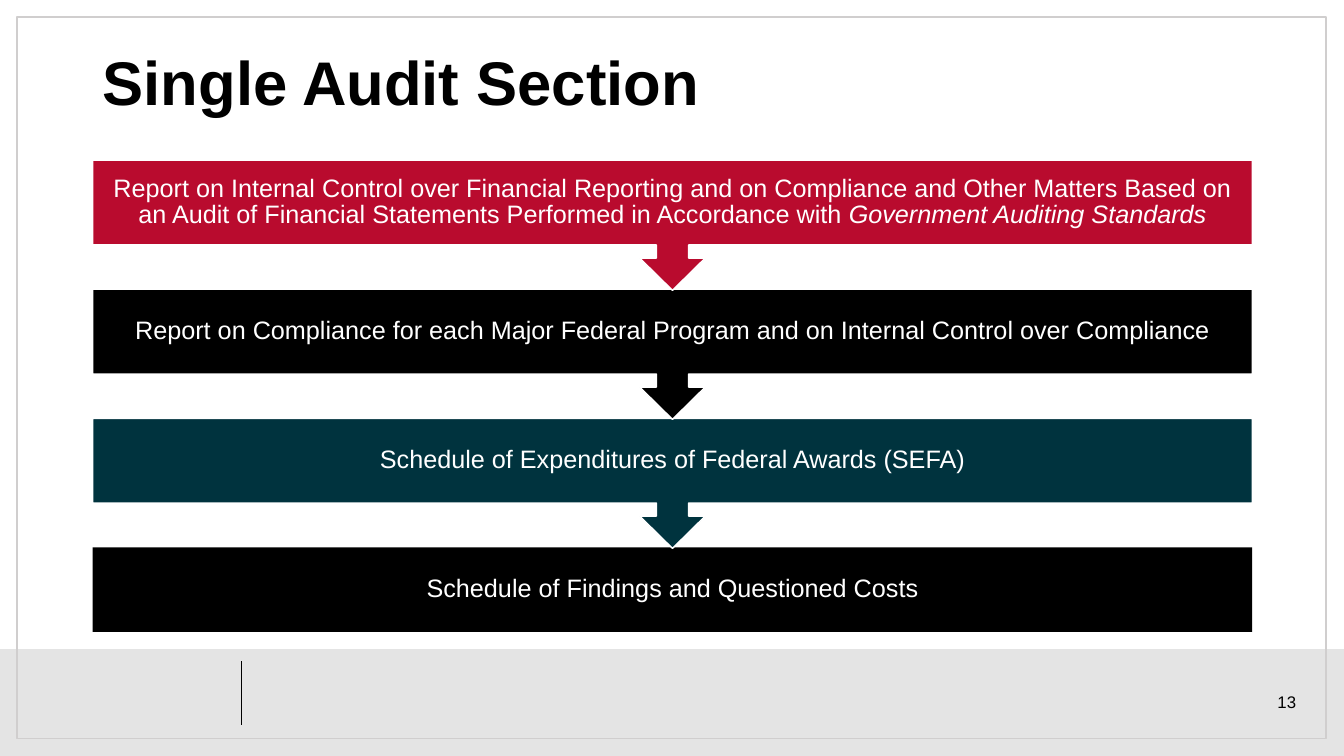
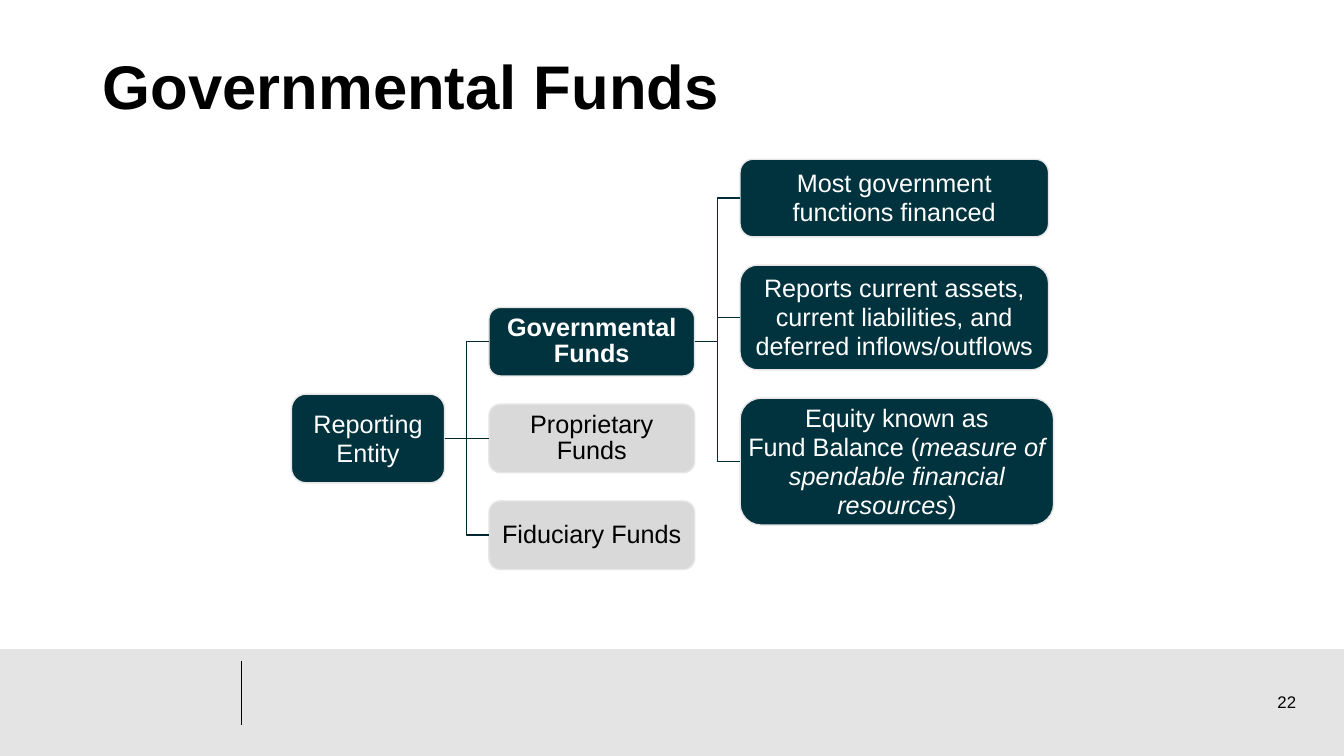
from dataclasses import dataclass

from lxml import etree
from pptx import Presentation
from pptx import util as u
from pptx.dml.color import RGBColor
from pptx.enum import shapes, text
from pptx.oxml import ns


@dataclass(frozen=True)
class Theme:
    font: str = "Arial"
    black: str = "000000"
    white: str = "FFFFFF"
    red: str = "B90B2E"
    teal: str = "00333E"
    gray: str = "D9D9D9"
    footer: str = "E4E4E4"
    frame: str = "D0CECE"
    box_edge: str = "E7E6E6"
    entity_link: str = "00272F"
    fund_link: str = "002C38"
    title_size: float = 44
    body_size: float = 18
    number_size: float = 12
    tight_leading: float = 18.6
    body_leading: float = 20.7


THEME = Theme()


def rgb(color):
    return RGBColor.from_string(color)


def fill_text(frame, lines, size, color, bold=False, leading=None, wrap=True,
              align=text.PP_ALIGN.CENTER, anchor=text.MSO_ANCHOR.MIDDLE, margin=0):
    frame.word_wrap = wrap
    frame.auto_size = text.MSO_AUTO_SIZE.NONE
    frame.vertical_anchor = anchor
    frame.margin_left = frame.margin_right = u.Inches(margin)
    frame.margin_top = frame.margin_bottom = 0
    paragraph = frame.paragraphs[0]
    paragraph.alignment = align
    if leading:
        paragraph.line_spacing = u.Pt(leading)
    for index, line in enumerate(lines):
        if index:
            paragraph.add_line_break()
        for words, italic in line:
            run = paragraph.add_run()
            run.text = words
            font = run.font
            font.name, font.size = THEME.font, u.Pt(size)
            font.bold, font.italic = bold, italic
            font.color.rgb = rgb(color)


def plain(*lines):
    return [[(line, False)] for line in lines]


def add_box(slide, kind, left, top, width, height, fill=None, edge=None):
    shape = slide.shapes.add_shape(kind, *map(u.Inches, (left, top, width, height)))
    shape.shadow.inherit = False
    if fill:
        shape.fill.solid()
        shape.fill.fore_color.rgb = rgb(fill)
    else:
        shape.fill.background()
    if edge:
        shape.line.color.rgb = rgb(edge)
        shape.line.width = u.Pt(1)
    else:
        shape.line.fill.background()
    return shape


def add_line(slide, kind, start, end, color, weight):
    line = slide.shapes.add_connector(kind, *map(u.Inches, (*start, *end)))
    line.line.color.rgb = rgb(color)
    line.line.width = u.Pt(weight)
    properties = line.element.find(ns.qn("p:spPr"))
    etree.SubElement(properties, ns.qn("a:effectLst"))
    return line


def add_base_slide(presentation, title, title_top, number):
    slide = presentation.slides.add_slide(presentation.slide_layouts[5])
    add_box(slide, shapes.MSO_SHAPE.RECTANGLE, 0, 6.44, 13.33, 1.06, THEME.footer)
    add_line(slide, shapes.MSO_CONNECTOR.STRAIGHT, (2.39, 6.56), (2.39, 7.19), THEME.black, 0.5)
    heading = slide.shapes.title
    heading.left, heading.top = u.Inches(1), u.Inches(title_top)
    heading.width, heading.height = u.Inches(11.33), u.Inches(0.72)
    fill_text(heading.text_frame, plain(title), THEME.title_size, THEME.black, bold=True,
              align=text.PP_ALIGN.LEFT, anchor=text.MSO_ANCHOR.TOP, margin=0.02)
    page = slide.shapes.add_textbox(*map(u.Inches, (12.63, 6.86, 0.28, 0.21)))
    fill_text(page.text_frame, plain(number), THEME.number_size, THEME.black,
              align=text.PP_ALIGN.LEFT, anchor=text.MSO_ANCHOR.TOP, margin=0.04)
    return slide


def add_step(slide, index, lines, color, has_arrow):
    top = 1.59 + 1.28 * index
    if has_arrow:
        height = 1.29
        step = add_box(slide, shapes.MSO_SHAPE.DOWN_ARROW_CALLOUT,
                       0.92, top, 11.5, height, color, THEME.white)
        for position, length in enumerate((0.32, 0.325, 0.32, 0.84)):
            step.adjustments[position] = length / height
    else:
        step = add_box(slide, shapes.MSO_SHAPE.RECTANGLE, 0.92, top, 11.5, 0.84, color)
    fill_text(step.text_frame, lines, THEME.body_size, THEME.white, leading=THEME.tight_leading)


def add_node(slide, left, top, width, height, lines, fill=THEME.teal, color=THEME.white,
             bold=False, leading=THEME.body_leading):
    node = add_box(slide, shapes.MSO_SHAPE.ROUNDED_RECTANGLE,
                   left, top, width, height, fill, THEME.box_edge)
    fill_text(node.text_frame, lines, THEME.body_size, color, bold, leading, wrap=False)
    return node


def link(slide, parent, child, color):
    middles = [node.top + node.height // 2 for node in (parent, child)]
    level = abs(middles[0] - middles[1]) < u.Inches(0.02)
    kind = shapes.MSO_CONNECTOR.STRAIGHT if level else shapes.MSO_CONNECTOR.ELBOW
    connector = add_line(slide, kind, (0, 0), (0, 0), color, 1)
    connector.begin_connect(parent, 3)
    connector.end_connect(child, 1)


def build_audit_slide(presentation):
    slide = add_base_slide(presentation, "Single Audit Section", 0.44, "13")
    add_box(slide, shapes.MSO_SHAPE.RECTANGLE, 0.17, 0.17, 12.98, 7.16, edge=THEME.frame)
    steps = [
        ([[("Report on Internal Control over Financial Reporting and on Compliance "
            "and Other Matters Based on", False)],
          [("an Audit of Financial Statements Performed in Accordance with ", False),
           ("Government Auditing Standards", True)]], THEME.red),
        (plain("Report on Compliance for each Major Federal Program and on "
               "Internal Control over Compliance"), THEME.black),
        (plain("Schedule of Expenditures of Federal Awards (SEFA)"), THEME.teal),
        (plain("Schedule of Findings and Questioned Costs"), THEME.black),
    ]
    last = len(steps) - 1
    for index in range(last, -1, -1):
        add_step(slide, index, *steps[index], has_arrow=index < last)


def build_funds_slide(presentation):
    slide = add_base_slide(presentation, "Governmental Funds", 0.48, "22")
    gap = 0.28
    entity = add_node(slide, 2.89, 3.91, 1.52, 0.88, plain("Reporting", "Entity"))

    fund_lines = [("Governmental", "Funds"), ("Proprietary", "Funds"), ("Fiduciary Funds",)]
    funds = []
    for index, lines in enumerate(fund_lines):
        active = index == 0
        funds.append(add_node(
            slide, 4.85, 3.05 + index * (0.68 + gap), 2.04, 0.68, plain(*lines),
            fill=THEME.teal if active else THEME.gray,
            color=THEME.white if active else THEME.black,
            bold=active, leading=THEME.tight_leading))
        link(slide, entity, funds[-1], THEME.entity_link)

    details = [
        (3.06, 0.77, plain("Most government", "functions financed")),
        (3.06, 1.04, plain("Reports current assets,", "current liabilities, and",
                           "deferred inflows/outflows")),
        (3.11, 1.26, [[("Equity known as", False)],
                      [("Fund Balance (", False), ("measure of", True)],
                      [("spendable financial", True)],
                      [("resources", True), (")", False)]]),
    ]
    top = 1.58
    for width, height, lines in details:
        detail = add_node(slide, 7.34, top, width, height, lines)
        link(slide, funds[0], detail, THEME.fund_link)
        top += height + gap


def main():
    presentation = Presentation()
    presentation.slide_width, presentation.slide_height = u.Inches(13.33), u.Inches(7.5)
    build_audit_slide(presentation)
    build_funds_slide(presentation)
    presentation.save("out.pptx")


if __name__ == "__main__":
    main()
